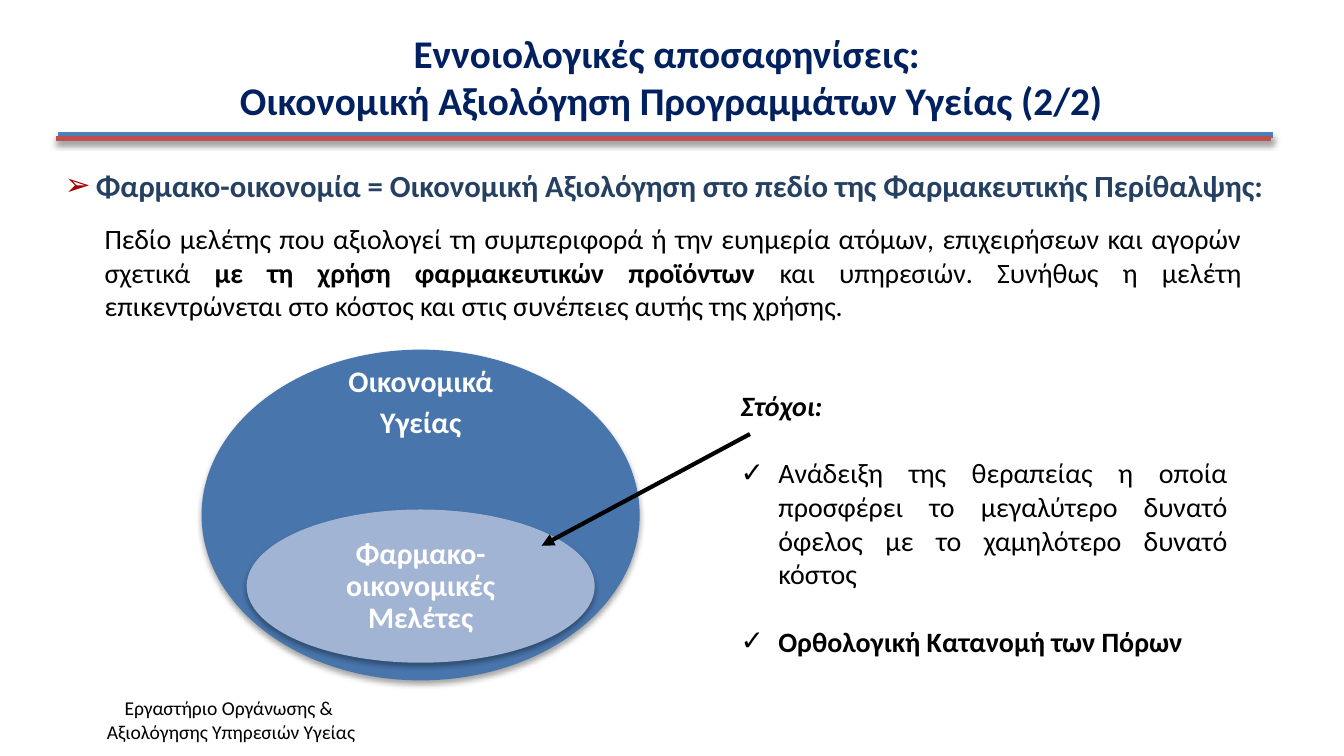
from lxml.etree import SubElement as Sub
from pptx import Presentation
from pptx.dml.color import RGBColor
from pptx.enum.shapes import MSO_CONNECTOR as Conn, MSO_SHAPE as Shape
from pptx.enum.text import MSO_ANCHOR as Anchor, PP_ALIGN as Align
from pptx.oxml.ns import qn
from pptx.util import Inches, Pt

WIDE = Inches(10)
HIGH = WIDE * 9 // 16
BLACK, WHITE = "000000", "FFFFFF"


def color(fmt, code):
    fmt.rgb = RGBColor.from_string(code)


def place(x, y, w, h):
    """Turn percent shares of the slide into lengths."""
    return [round(side * part / 100)
            for side, part in zip((WIDE, HIGH, WIDE, HIGH), (x, y, w, h))]


def shade(item, soft=True):
    """Give a soft drop shadow, or none at all."""
    props = item._element.spPr
    group = Sub(props, qn("a:effectLst"))
    if soft:
        drop = Sub(group, qn("a:outerShdw"), blurRad=str(Pt(3.1)),
                   dist=str(Pt(1.8)), dir="5400000", rotWithShape="0")
        tone = Sub(drop, qn("a:srgbClr"), val=BLACK)
        Sub(tone, qn("a:alpha"), val="35000")


def style(para, size, code, bold=False, ital=False):
    for run in para.runs:
        font = run.font
        font.name, font.size = "Calibri", Pt(size)
        font.bold, font.italic = bold, ital
        color(font.color, code)


def text(slide, box, lines, size, code=BLACK, bold=False,
         align=Align.LEFT, wrap=True):
    frame = slide.shapes.add_textbox(*place(*box)).text_frame
    frame.word_wrap = wrap
    frame.text = "\n".join(lines)
    for para in frame.paragraphs:
        para.alignment = align
        style(para, size, code, bold)
    return frame


def bullet(para, sign, dent, code=BLACK):
    props = para._p.get_or_add_pPr()
    props.set("marL", str(Inches(dent)))
    props.set("indent", str(-Inches(dent)))
    Sub(Sub(props, qn("a:buClr")), qn("a:srgbClr"), val=code)
    Sub(props, qn("a:buFont"), typeface="Arial")
    Sub(props, qn("a:buChar"), char=sign)


def oval(slide, box, code):
    item = slide.shapes.add_shape(Shape.OVAL, *place(*box))
    item.fill.solid()
    color(item.fill.fore_color, code)
    item.line.fill.background()
    shade(item)


def label(slide, box, lines):
    frame = text(slide, box, lines, 16, WHITE, True, Align.CENTER)
    frame.vertical_anchor = Anchor.MIDDLE
    frame.margin_left = frame.margin_right = Inches(0.12)
    frame.margin_top = frame.margin_bottom = Inches(0.12)
    for para in frame.paragraphs:
        para.line_spacing = 0.9
        para.space_after = Pt(5)


def line(slide, ends, code, width, soft=False, arrow=False):
    item = slide.shapes.add_connector(Conn.STRAIGHT, *place(*ends))
    item.line.width = Pt(width)
    color(item.line.color, code)
    if arrow:
        stroke = item._element.spPr.find(qn("a:ln"))
        Sub(stroke, qn("a:tailEnd"), type="triangle")
    shade(item, soft)


def main():
    deck = Presentation()
    deck.slide_width, deck.slide_height = WIDE, HIGH
    slide = deck.slides.add_slide(deck.slide_layouts[6])

    # Lead statement
    lead = text(slide, (3.85, 21.16, 92.6, 6.76),
                ["Φαρμακο-οικονομία = Οικονομική Αξιολόγηση στο πεδίο της "
                 "Φαρμακευτικής Περίθαλψης:"], 16.5, "254061", True)
    bullet(lead.paragraphs[0], "➢", 0.23, "A20000")

    # Nested fields of study
    oval(slide, (15, 46.25, 32.6, 43.75), "4875AC")
    label(slide, (22.75, 49.6, 17.1, 7.47), ["Οικονομικά", "Υγείας"])
    oval(slide, (18.35, 67.4, 25.9, 20.27), "A2B4D4")
    label(slide, (22.15, 72.53, 18.3, 10.13), ["Φαρμακο-οικονομικές Μελέτες"])

    # Goals, with an arrow to the inner field
    goals = text(slide, (54.13, 50.5, 38.2, 37.69),
                 ["Στόχοι:",
                  "Ανάδειξη της θεραπείας η οποία προσφέρει το μεγαλύτερο "
                  "δυνατό όφελος με το χαμηλότερο δυνατό κόστος",
                  "Ορθολογική Κατανομή των Πόρων"], 15, align=Align.JUSTIFY)
    head, *items = goals.paragraphs
    style(head, 15, BLACK, True, True)
    for para in items:
        para.space_before = Pt(18.2)
        bullet(para, "✓", 0.28)
    style(items[-1], 15, BLACK, True)
    line(slide, (55.8, 57.42, 40.3, 72.2), BLACK, 2.25, arrow=True)

    # Definition, with its key phrase in bold
    body = text(slide, (6.8, 28.44, 86.6, 15.29),
                ["Πεδίο μελέτης που αξιολογεί τη συμπεριφορά ή την ευημερία "
                 "ατόμων, επιχειρήσεων και αγορών σχετικά "],
                15, align=Align.JUSTIFY).paragraphs[0]
    for part in ("με τη χρήση φαρμακευτικών προϊόντων ",
                 "και υπηρεσιών. Συνήθως η μελέτη επικεντρώνεται στο κόστος "
                 "και στις συνέπειες αυτής της χρήσης."):
        body.add_run().text = part
    style(body, 15, BLACK)
    body.runs[1].font.bold = True

    # Double rule under the title
    line(slide, (4.3, 17.9, 94.7, 17.9), "4F81BD", 3, soft=True)
    line(slide, (4.2, 18.35, 94.6, 18.35), "C0504D", 3, soft=True)

    # Footer and title
    text(slide, (6.8, 91.25, 20.8, 8),
         ["Εργαστήριο Οργάνωσης & ", "Αξιολόγησης Υπηρεσιών Υγείας"],
         10.5, align=Align.CENTER, wrap=False)
    text(slide, (7.8, 3.02, 84.3, 14.4),
         ["Εννοιολογικές αποσαφηνίσεις: ",
          "Οικονομική Αξιολόγηση Προγραμμάτων Υγείας (2/2)"],
         21, "002060", True, Align.CENTER)

    deck.save("out.pptx")


if __name__ == "__main__":
    main()
